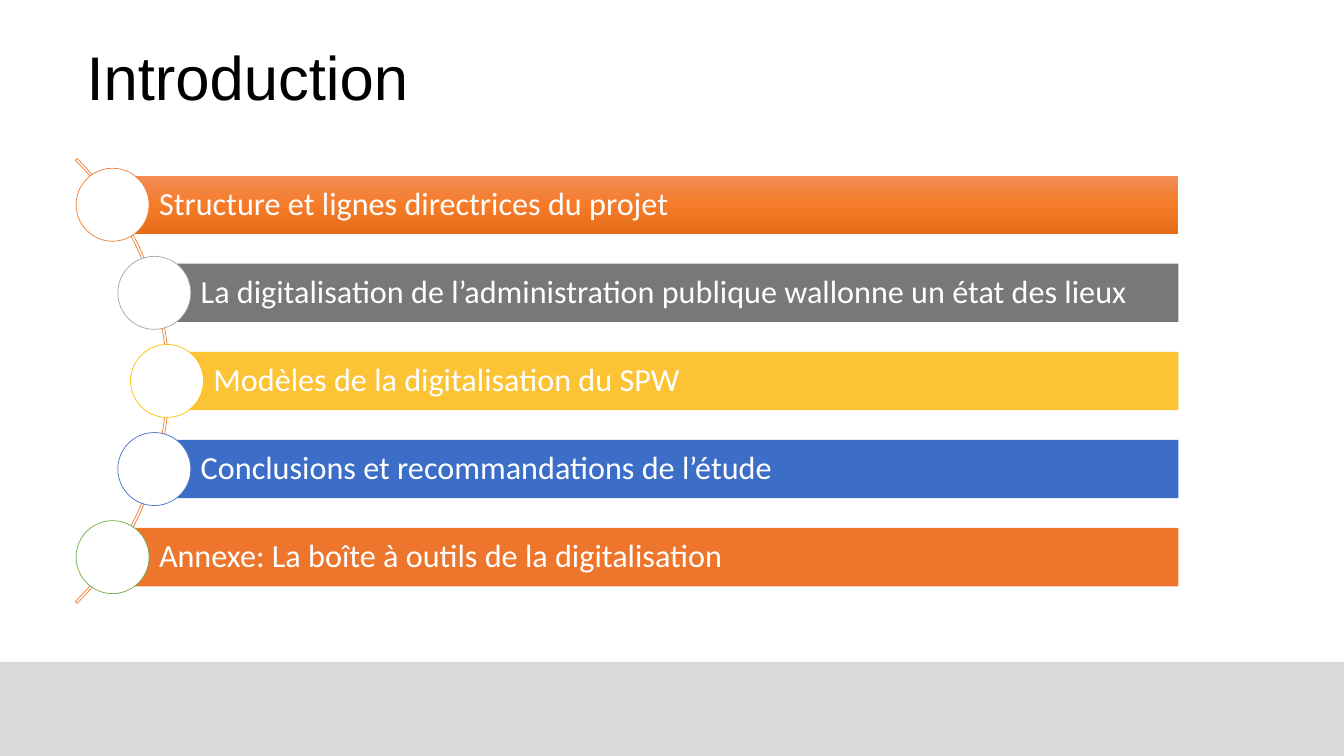
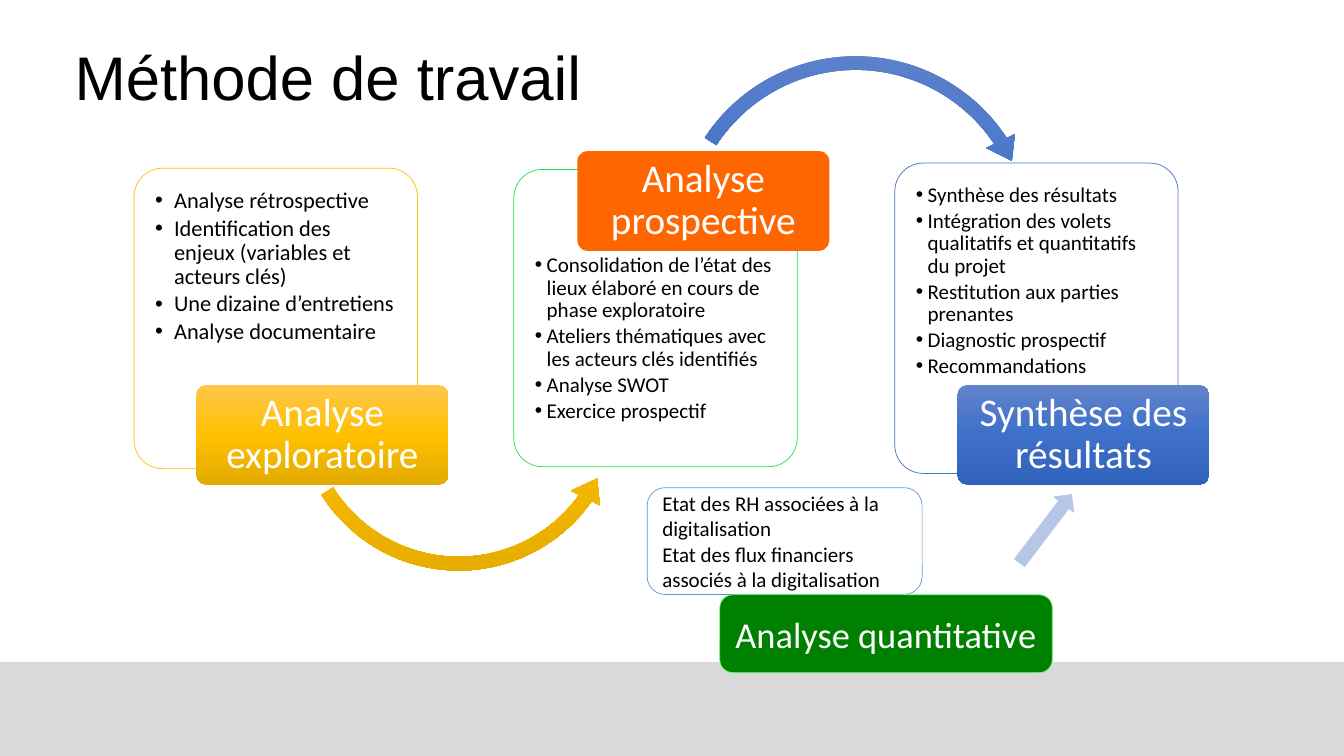
from copy import deepcopy
from math import sqrt

from lxml import etree
from pptx import Presentation
from pptx.dml.color import RGBColor
from pptx.enum.shapes import MSO_SHAPE
from pptx.enum.text import MSO_ANCHOR, MSO_AUTO_SIZE, PP_ALIGN
from pptx.oxml.ns import qn
from pptx.util import Cm, Pt

RECT = MSO_SHAPE.RECTANGLE
ROUNDED = MSO_SHAPE.ROUNDED_RECTANGLE
OVAL = MSO_SHAPE.OVAL
BLOCK_ARC = MSO_SHAPE.BLOCK_ARC
ARC_UNDER = MSO_SHAPE.LEFT_CIRCULAR_ARROW
ARC_OVER = MSO_SHAPE.CIRCULAR_ARROW
RIGHT_ARROW = MSO_SHAPE.RIGHT_ARROW
LEFT, CENTER = PP_ALIGN.LEFT, PP_ALIGN.CENTER
TOP, MIDDLE = MSO_ANCHOR.TOP, MSO_ANCHOR.MIDDLE
NO_AUTOFIT = MSO_AUTO_SIZE.NONE

COLORS = {
    "white": "FFFFFF", "black": "000000", "band": "D9D9D9",
    "orange": "ED7D31", "orange light": "F18C57",
    "orange mid": "F67B28", "orange dark": "E56C19",
    "orange bar": "EE762C", "orange label": "FF6600",
    "grey": "A5A5A5", "grey bar": "787878",
    "gold": "FFC000", "gold light": "FFC64B",
    "gold dark": "E3AB00", "gold bar": "FCC334",
    "blue": "4472C4", "blue light": "6183CB", "blue mid": "3E70CA",
    "blue dark": "3062BB", "blue bar": "3C6EC7",
    "sky": "5B9BD5", "pale blue": "B4C7E7",
    "leaf": "70AD47", "green": "008000",
    "bright green": "23E148", "lime": "66FF66",
}
ORANGE_FADE = ("orange light", "orange mid", "orange dark")
GOLD_FADE = ("gold light", "gold", "gold dark")
BLUE_FADE = ("blue light", "blue mid", "blue dark")

WIDTH, HEIGHT = 33.87, 19.05
BAND_TOP = 16.68
CARD_WIDTH = 7.14
LABEL_WIDTH, LABEL_HEIGHT = 6.35, 2.51


def rgb(name):
    return RGBColor.from_string(COLORS[name])


class Deck:
    title_font, body_font = "Arial", "Calibri"

    def __init__(self):
        self.prs = Presentation()
        self.prs.slide_width, self.prs.slide_height = Cm(WIDTH), Cm(HEIGHT)
        self.slide = None

    def new_slide(self, heading, left):
        self.slide = self.prs.slides.add_slide(self.prs.slide_layouts[5])
        title = self.slide.shapes.title
        title.left, title.top = Cm(left), Cm(0.84)
        title.width, title.height = Cm(16), Cm(2.13)
        self.set_text(title, [heading], 44, "black", font=self.title_font,
                      anchor=TOP)
        self.shape(RECT, 0, BAND_TOP, WIDTH, HEIGHT - BAND_TOP, "band")

    def shape(self, kind, left, top, width, height, fill=None, line=None,
              adjust=(), rotation=0):
        shape = self.slide.shapes.add_shape(
            kind, Cm(left), Cm(top), Cm(width), Cm(height))
        shape.shadow.inherit = False
        shape.rotation = rotation
        for index, value in enumerate(adjust):
            shape.adjustments[index] = value
        if isinstance(fill, tuple):
            self.fade(shape, fill)
        elif fill:
            shape.fill.solid()
            shape.fill.fore_color.rgb = rgb(fill)
        else:
            shape.fill.background()
        if line:
            shape.line.color.rgb = rgb(line)
            shape.line.width = Pt(0.5)
        else:
            shape.line.fill.background()
        return shape

    def fade(self, shape, names):
        shape.fill.gradient()
        shape.fill.gradient_angle = 270
        stops = shape._element.spPr.find(".//" + qn("a:gsLst"))
        stops.insert(1, deepcopy(stops[0]))
        for index, stop in enumerate(shape.fill.gradient_stops):
            stop.position = index / 2
            stop.color.rgb = rgb(names[index])

    def set_text(self, shape, lines, size, color, font=None, align=LEFT,
                 anchor=MIDDLE, insets=(0.25, 0.13, 0.25, 0.13), spacing=1,
                 after=0):
        frame = shape.text_frame
        frame.text = "\n".join(lines)
        frame.word_wrap = True
        frame.auto_size = NO_AUTOFIT
        frame.vertical_anchor = anchor
        (frame.margin_left, frame.margin_top,
         frame.margin_right, frame.margin_bottom) = map(Cm, insets)
        for paragraph in frame.paragraphs:
            paragraph.alignment = align
            paragraph.line_spacing = spacing
            paragraph.space_before = Pt(0)
            paragraph.space_after = Pt(after)
            for run in paragraph.runs:
                run.font.name = font or self.body_font
                run.font.size = Pt(size)
                run.font.color.rgb = rgb(color)

    def agenda_bar(self, text, left, top, right, height, fill):
        bar = self.shape(RECT, left, top, right - left, height, fill)
        self.set_text(bar, [text], 23, "white",
                      insets=(1.17, 0.15, 0.15, 0.15), spacing=0.9)

    def card(self, lines, left, top, height, line, size, indent,
             text_top=0.32):
        card = self.shape(ROUNDED, left, top, CARD_WIDTH, height, "white",
                          line, adjust=(0.1,))
        white = card._element.spPr.find(
            qn("a:solidFill") + "/" + qn("a:srgbClr"))
        etree.SubElement(white, qn("a:alpha"), val="90000")
        self.set_text(card, lines, size, "black", anchor=TOP,
                      insets=(0.32, text_top, 0.32, 0.32), spacing=0.9,
                      after=size * 0.15)
        for paragraph in card.text_frame.paragraphs:
            self.bullet(paragraph, indent)

    def bullet(self, paragraph, indent):
        properties = paragraph._p.get_or_add_pPr()
        properties.set("marL", str(Cm(indent)))
        properties.set("indent", str(-Cm(indent)))
        etree.SubElement(properties, qn("a:buFont"), typeface="Arial")
        etree.SubElement(properties, qn("a:buChar"), char="•")

    def label(self, text, left, top, fill):
        label = self.shape(ROUNDED, left, top, LABEL_WIDTH, LABEL_HEIGHT,
                           fill, adjust=(0.1,))
        self.set_text(label, [text], 28, "white", align=CENTER,
                      insets=(0.15, 0.1, 0.15, 0.1), spacing=0.9)

    def curved_arrow(self, kind, left, top, side, fill, adjust, rotation):
        self.shape(kind, left, top, side, side, fill, adjust=adjust,
                   rotation=rotation)


def introduction(deck):
    deck.new_slide("Introduction", 1.93)
    center_x, center_y, radius = -3.66, 9.6, 7.87
    pitch, bar_height, dot = 2.22, 1.47, 1.84
    arc = 15.85
    deck.shape(BLOCK_ARC, center_x - arc / 2, center_y - arc / 2, arc, arc,
               line="orange", adjust=(189, 27, 0.004))
    chapters = [
        ("Structure et lignes directrices du projet", ORANGE_FADE, "orange"),
        ("La digitalisation de l’administration publique wallonne "
         "un état des lieux", "grey bar", "grey"),
        ("Modèles de la digitalisation du SPW", "gold bar", "gold"),
        ("Conclusions et recommandations de l’étude", "blue bar", "blue"),
        ("Annexe: La boîte à outils de la digitalisation", "orange bar",
         "leaf"),
    ]
    for index, (chapter, fill, ring) in enumerate(chapters):
        offset = (index - 2) * pitch
        x = center_x + sqrt(radius ** 2 - offset ** 2)
        y = center_y + offset
        deck.agenda_bar(chapter, x, y - bar_height / 2, 29.7, bar_height,
                        fill)
        deck.shape(OVAL, x - dot / 2, y - dot / 2, dot, dot, "white", ring)


def working_method(deck):
    deck.new_slide("Méthode de travail", 1.63)

    deck.card(["Analyse rétrospective",
               "Identification des enjeux (variables et acteurs clés)",
               "Une dizaine d’entretiens",
               "Analyse documentaire"],
              3.38, 4.24, 7.57, "gold", 16, 0.48)
    deck.curved_arrow(ARC_UNDER, 7.24, 5.97, 8.64, GOLD_FADE,
                      (0.04, 5.039, 22.792, 90.243, 0.047), 357.3)
    deck.label("Analyse exploratoire", 4.95, 9.7, GOLD_FADE)

    deck.card(["Consolidation de l’état des lieux élaboré en cours de "
               "phase exploratoire",
               "Ateliers thématiques avec les acteurs clés identifiés",
               "Analyse SWOT",
               "Exercice prospectif"],
              12.95, 4.27, 7.49, "bright green", 15, 0.3, text_top=1.93)
    deck.curved_arrow(ARC_OVER, 16.79, 1.19, 9.55, BLUE_FADE,
                      (0.036, 4.515, 193.725, 125.75, 0.042), 3.7)
    deck.label("Analyse prospective", 14.55, 3.81, "orange label")

    deck.card(["Synthèse des résultats",
               "Intégration des volets qualitatifs et quantitatifs du projet",
               "Restitution aux parties prenantes",
               "Diagnostic prospectif",
               "Recommandations"],
              22.55, 4.11, 7.82, "blue", 15, 0.3)
    deck.label("Synthèse des résultats", 24.13, 9.7, BLUE_FADE)

    inventory = deck.shape(ROUNDED, 16.31, 12.29, 6.93, 2.69, line="sky")
    deck.set_text(inventory, ["Etat des RH associées à la digitalisation",
                              "Etat des flux financiers associés à la "
                              "digitalisation"], 15, "black")
    deck.shape(RIGHT_ARROW, 25.27, 13, 2.16, 0.64, "pale blue", "pale blue",
               rotation=307.3)
    quantitative = deck.shape(ROUNDED, 18.14, 14.99, 8.38, 1.96, "green",
                              "lime")
    deck.set_text(quantitative, ["Analyse quantitative"], 26, "white",
                  align=CENTER)


def main():
    deck = Deck()
    introduction(deck)
    working_method(deck)
    deck.prs.save("out.pptx")


if __name__ == "__main__":
    main()
